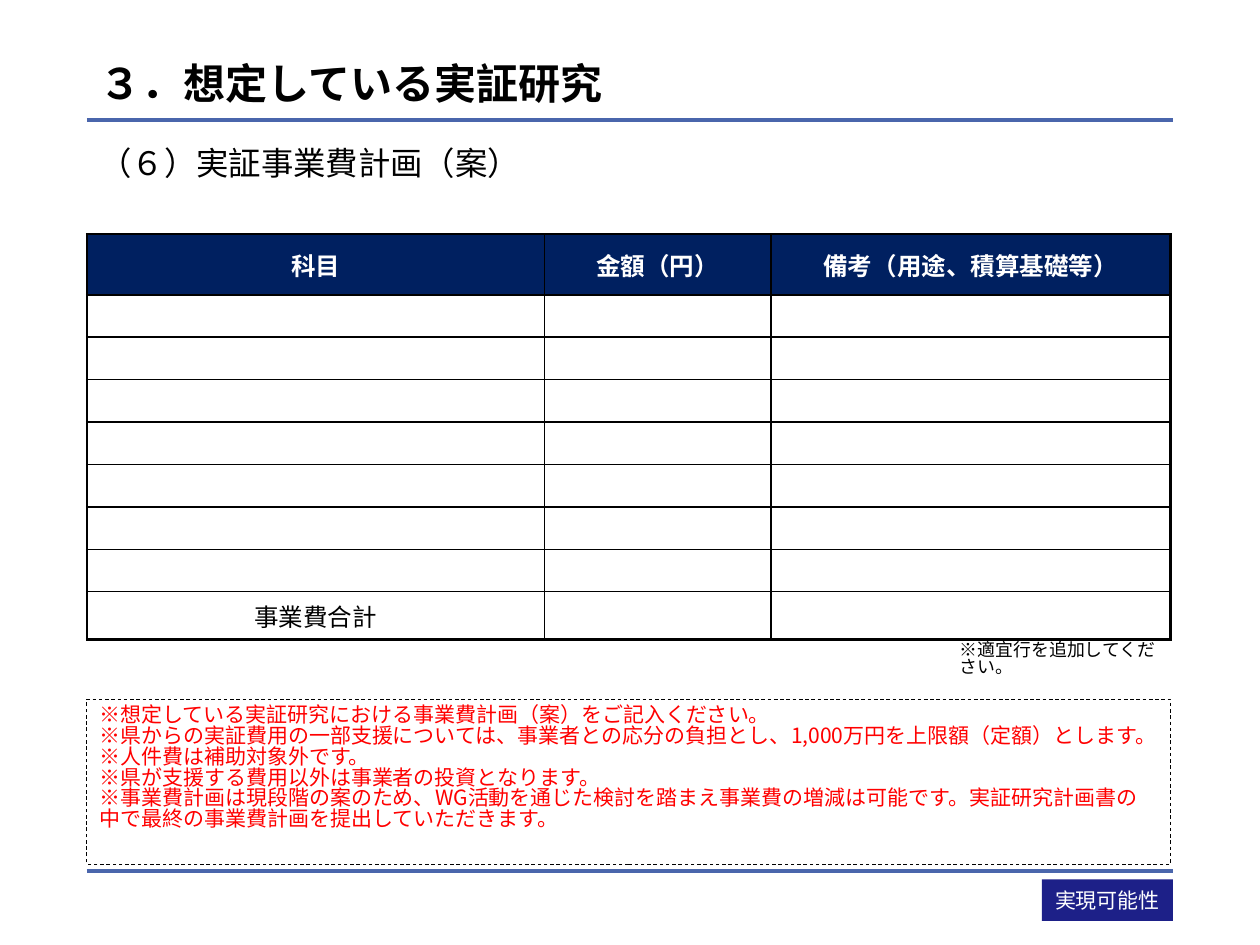
from lxml import etree
from pptx import Presentation
from pptx.dml.color import RGBColor
from pptx.enum import dml, shapes, text
from pptx.oxml.ns import qn
from pptx.util import Inches, Pt

FONT = "Noto Sans CJK JP"
BLACK, WHITE, RED = "000000", "FFFFFF", "FF0000"
NAVY, RULE, TAG = "002060", "4A66AC", "1D2088"
LEFT, WIDTH = 0.69, 8.62

TITLE = "３．想定している実証研究"
SUBTITLE = "（６）実証事業費計画（案）"
HEADERS = ["科目", "金額（円）", "備考（用途、積算基礎等）"]
TOTAL = "事業費合計"
BLANK_ROWS = 7
COL_WIDTHS = [3.63, 1.8, 3.17]
ROW_HEIGHTS = [0.48] + [0.337] * BLANK_ROWS + [0.38]
ROW_NOTE = "※適宜行を追加してください。"
NOTES = [
    "※想定している実証研究における事業費計画（案）をご記入ください。",
    "※県からの実証費用の一部支援については、事業者との応分の負担とし、1,000万円を上限額（定額）とします。",
    "※人件費は補助対象外です。",
    "※県が支援する費用以外は事業者の投資となります。",
    "※事業費計画は現段階の案のため、WG活動を通じた検討を踏まえ事業費の増減は可能です。"
    "実証研究計画書の中で最終の事業費計画を提出していただきます。",
]
CATEGORY = "実現可能性"


def rgb(color):
    return RGBColor.from_string(color)


def write(tf, lines, size, color=BLACK, bold=False, font=FONT, spacing=None,
          align=text.PP_ALIGN.LEFT, anchor=text.MSO_ANCHOR.TOP):
    tf.word_wrap = True
    tf.vertical_anchor = anchor
    tf.text = "\n".join(lines)
    for p in tf.paragraphs:
        p.alignment = align
        if spacing:
            p.line_spacing = spacing
        for r in p.runs:
            r.font.size, r.font.bold, r.font.name = Pt(size), bold, font
            r.font.color.rgb = rgb(color)
            etree.SubElement(r.font._element, qn("a:ea"), typeface=FONT)


def add_text(s, box, line, size, **style):
    tb = s.shapes.add_textbox(*map(Inches, box))
    write(tb.text_frame, [line], size, **style)


def add_rect(s, box):
    sp = s.shapes.add_shape(shapes.MSO_SHAPE.RECTANGLE, *map(Inches, box))
    sp.shadow.inherit = False
    return sp


def add_rule(s, y):
    c = s.shapes.add_connector(shapes.MSO_CONNECTOR.STRAIGHT, Inches(LEFT),
                               Inches(y), Inches(LEFT + WIDTH), Inches(y))
    c.line.color.rgb = rgb(RULE)
    c.line.width = Pt(2.25)
    etree.SubElement(c._element.spPr, qn("a:effectLst"))


def set_borders(cell, widths):
    """Draw black cell borders; widths are points for left, right, top, bottom."""
    tc_pr = cell._tc.get_or_add_tcPr()
    for i, (side, width) in enumerate(zip("LRTB", widths)):
        ln = etree.Element(qn(f"a:ln{side}"), w=str(Pt(width)))
        fill = etree.SubElement(ln, qn("a:solidFill"))
        etree.SubElement(fill, qn("a:srgbClr"), val=BLACK)
        tc_pr.insert(i, ln)


def add_budget_table(s):
    rows, cols = len(ROW_HEIGHTS), len(COL_WIDTHS)
    table = s.shapes.add_table(rows, cols, Inches(LEFT), Inches(1.86),
                               Inches(sum(COL_WIDTHS)),
                               Inches(sum(ROW_HEIGHTS))).table
    for column, width in zip(table.columns, COL_WIDTHS):
        column.width = Inches(width)
    for row, height in zip(table.rows, ROW_HEIGHTS):
        row.height = Inches(height)
    content = [HEADERS] + [[""] * cols] * BLANK_ROWS + [[TOTAL, "", ""]]
    for i, line in enumerate(content):
        header = i == 0
        for j, value in enumerate(line):
            cell = table.cell(i, j)
            cell.fill.solid()
            cell.fill.fore_color.rgb = rgb(NAVY if header else WHITE)
            edges = (j == 0, j == cols - 1, header, i == rows - 1)
            set_borders(cell, [1.5 if edge else 1 for edge in edges])
            cell.vertical_anchor = text.MSO_ANCHOR.MIDDLE
            if value:
                write(cell.text_frame, [value], 14, WHITE if header else BLACK,
                      bold=header, font="Calibri", align=text.PP_ALIGN.CENTER)
            else:
                cell.text_frame.paragraphs[0].font.size = Pt(10)


def main():
    prs = Presentation()
    prs.slide_width, prs.slide_height = Inches(10), Inches(7.5)
    s = prs.slides.add_slide(prs.slide_layouts[6])

    for y in (0.95, 6.91):
        add_rule(s, y)
    add_text(s, (LEFT, 0.4, WIDTH, 0.56), TITLE, 24, bold=True, spacing=0.9,
             anchor=text.MSO_ANCHOR.MIDDLE)
    add_text(s, (LEFT, 1.17, WIDTH, 0.33), SUBTITLE, 18.5, spacing=0.7)
    add_budget_table(s)
    add_text(s, (7.52, 5.06, 1.79, 0.28), ROW_NOTE, 10.2, spacing=0.77)

    tag = add_rect(s, (8.27, 6.98, 1.04, 0.33))
    tag.fill.solid()
    tag.fill.fore_color.rgb = rgb(TAG)
    tag.line.fill.background()
    write(tag.text_frame, [CATEGORY], 12, WHITE, align=text.PP_ALIGN.CENTER,
          anchor=text.MSO_ANCHOR.MIDDLE)

    notes = add_rect(s, (LEFT, 5.55, 8.6, 1.31))
    notes.fill.background()
    notes.line.color.rgb = rgb(BLACK)
    notes.line.width = Pt(0.5)
    notes.line.dash_style = dml.MSO_LINE.DASH
    write(notes.text_frame, NOTES, 12, RED, spacing=0.83)

    prs.save("out.pptx")


if __name__ == "__main__":
    main()
